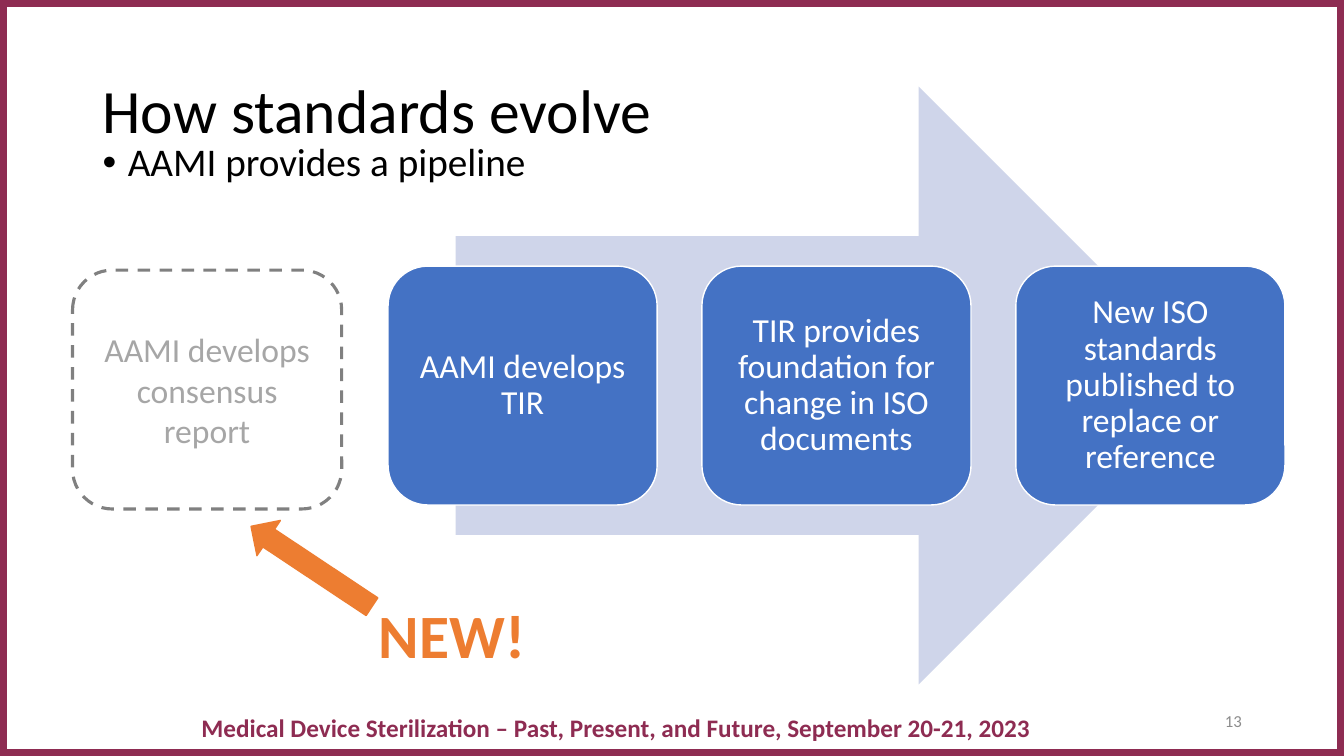
"""Build the slide on how standards evolve."""
from dataclasses import dataclass

from lxml import etree
from pptx import Presentation
from pptx.dml.color import RGBColor
from pptx.enum.dml import MSO_LINE
from pptx.enum.shapes import MSO_SHAPE
from pptx.enum.text import MSO_ANCHOR, PP_ALIGN
from pptx.oxml.ns import qn
from pptx.util import Pt

ARROW = MSO_SHAPE.RIGHT_ARROW
ROUNDED = MSO_SHAPE.ROUNDED_RECTANGLE
RECTANGLE = MSO_SHAPE.RECTANGLE
DASH = MSO_LINE.DASH
LEFT, CENTER, RIGHT = PP_ALIGN.LEFT, PP_ALIGN.CENTER, PP_ALIGN.RIGHT
TOP, MIDDLE = MSO_ANCHOR.TOP, MSO_ANCHOR.MIDDLE

BLACK = RGBColor(0x00, 0x00, 0x00)
WHITE = RGBColor(0xFF, 0xFF, 0xFF)
BLUE = RGBColor(0x44, 0x72, 0xC4)
PALE_BLUE = RGBColor(0xCF, 0xD5, 0xEA)
ORANGE = RGBColor(0xED, 0x7D, 0x31)
PLUM = RGBColor(0x8E, 0x2C, 0x52)
DASH_GRAY = RGBColor(0x80, 0x80, 0x80)
TEXT_GRAY = RGBColor(0xA6, 0xA6, 0xA6)
NUMBER_GRAY = RGBColor(0x8C, 0x8C, 0x8C)

STAGE_LEFT, STAGE_TOP, STAGE_STEP = 277.2, 190.08, 224.2
STAGE_WIDTH, STAGE_HEIGHT = 192.24, 170.64
STAGES = (
    "AAMI develops TIR",
    "TIR provides foundation for change in ISO documents",
    "New ISO standards published to replace or reference",
)


@dataclass
class Frame:
    """Place and size in points."""
    left: float
    top: float
    width: float
    height: float

    def lengths(self) -> tuple:
        """Return the frame as slide lengths."""
        return Pt(self.left), Pt(self.top), Pt(self.width), Pt(self.height)


@dataclass
class Words:
    """Text with its format."""
    text: str
    size: float
    color: RGBColor
    bold: bool = False
    align: PP_ALIGN = LEFT
    anchor: MSO_ANCHOR = TOP
    spacing: float = 1.0
    bullet: bool = False
    wrap: bool = True


@dataclass
class Figure:
    """Preset shape with its format and optional text."""
    kind: MSO_SHAPE
    frame: Frame
    fill: RGBColor | None = None
    line: RGBColor | None = None
    line_width: float = 1
    dash: MSO_LINE | None = None
    rotation: float = 0
    words: Words | None = None


def write(box, words: Words) -> None:
    """Put formatted words in a box."""
    frame = box.text_frame
    frame.word_wrap = words.wrap
    frame.vertical_anchor = words.anchor
    para = frame.paragraphs[0]
    para.alignment = words.align
    para.line_spacing = words.spacing
    if words.bullet:
        properties = para._p.get_or_add_pPr()
        properties.set("marL", str(Pt(18)))
        properties.set("indent", str(-Pt(18)))
        etree.SubElement(properties, qn("a:buFont"), typeface="Arial")
        etree.SubElement(properties, qn("a:buChar"), char="•")
    span = para.add_run()
    span.text = words.text
    formats = {"name": "Calibri", "size": Pt(words.size), "bold": words.bold}
    for name, value in formats.items():
        setattr(span.font, name, value)
    span.font.color.rgb = words.color


def add_label(page, frame: Frame, words: Words) -> None:
    """Add a text box."""
    write(page.shapes.add_textbox(*frame.lengths()), words)


def add_figure(page, figure: Figure) -> None:
    """Add a preset shape."""
    shape = page.shapes.add_shape(figure.kind, *figure.frame.lengths())
    shape.shadow.inherit = False
    shape.rotation = figure.rotation
    if figure.fill is None:
        shape.fill.background()
    else:
        shape.fill.solid()
        shape.fill.fore_color.rgb = figure.fill
    if figure.line is None:
        shape.line.fill.background()
    else:
        shape.line.color.rgb = figure.line
        shape.line.width = Pt(figure.line_width)
        shape.line.dash_style = figure.dash
    if figure.words:
        write(shape, figure.words)


def stage_figure(index: int, text: str) -> Figure:
    """Describe one blue stage of the pipeline."""
    frame = Frame(STAGE_LEFT + index * STAGE_STEP, STAGE_TOP, STAGE_WIDTH, STAGE_HEIGHT)
    words = Words(text, 24, WHITE, align=CENTER, anchor=MIDDLE, spacing=0.9)
    return Figure(ROUNDED, frame, BLUE, WHITE, words=words)


LABELS = (
    (Frame(66.24, 98.64, 828, 342.72),
     Words("AAMI provides a pipeline", 28, BLACK, spacing=0.9, bullet=True)),
    (Frame(66.24, 28.8, 828, 104.4),
     Words("How standards evolve", 44, BLACK, anchor=MIDDLE, spacing=0.9)),
    (Frame(678.24, 500.4, 216, 28.8),
     Words("13", 12, NUMBER_GRAY, align=RIGHT, anchor=MIDDLE)),
    (Frame(263.52, 422.64, 135.36, 60.48), Words("NEW!", 44, ORANGE, bold=True)),
    (Frame(136.8, 505.44, 612, 28.8),
     Words("Medical Device Sterilization – Past, Present, and Future, September 20-21, 2023",
           18, PLUM, bold=True, wrap=False)),
)
FIGURES = (
    Figure(ARROW, Frame(325.44, 61.92, 544.32, 426.96), PALE_BLUE),
    *(stage_figure(index, text) for index, text in enumerate(STAGES)),
    Figure(ROUNDED, Frame(51.84, 192.96, STAGE_WIDTH, STAGE_HEIGHT), None, DASH_GRAY, 2.25, DASH,
           words=Words("AAMI develops consensus report", 24, TEXT_GRAY,
                       align=CENTER, anchor=MIDDLE)),
    Figure(ARROW, Frame(170.64, 389.52, 103.68, 30.24), ORANGE, ORANGE, rotation=213.6),
    Figure(RECTANGLE, Frame(0, 0, 960, 540), None, PLUM, 9.75),
)


def main() -> None:
    """Build and save the deck."""
    deck = Presentation()
    deck.slide_width, deck.slide_height = Pt(960), Pt(540)
    page = deck.slides.add_slide(deck.slide_layouts[6])
    for figure in FIGURES:
        add_figure(page, figure)
    for frame, words in LABELS:
        add_label(page, frame, words)
    deck.save("out.pptx")


if __name__ == "__main__":
    main()
